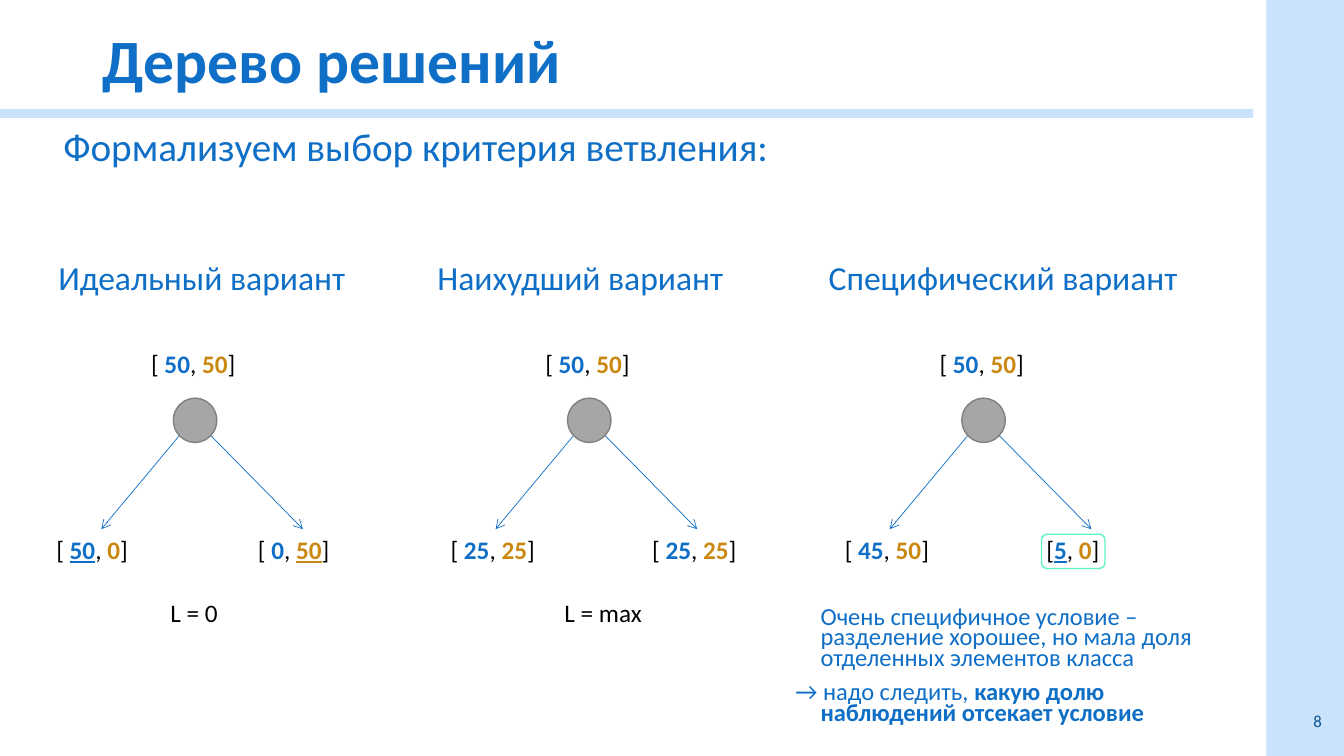
from dataclasses import dataclass

from lxml import etree
from pptx import Presentation
from pptx.dml.color import RGBColor
from pptx.enum import shapes, text
from pptx.oxml.ns import qn
from pptx.util import Inches, Pt


@dataclass(frozen=True)
class Theme:
    font: str = "Calibri"
    blue: str = "0F6FC6"
    navy: str = "0B5394"
    pale: str = "C8E3FB"
    gold: str = "CA8810"
    black: str = "000000"
    node: str = "A6A6A6"
    node_line: str = "808080"
    mint: str = "5FF3CA"
    title: float = 44
    lead: float = 28
    heading: float = 24
    label: float = 18
    note: float = 17.5
    number: float = 12


T = Theme()
TREE_LEFT, TREE_STEP = 0.46, 3.91
LABEL_W, LABEL_H = 1.09, 0.4

# heading, heading left and width, left leaf, right leaf, loss
# A leaf is: opening bracket, first count, second count, index of underlined count
VARIANTS = [
    ("Идеальный вариант", 0.48, 3.62,
     ("[ ", "50", "0", 0), ("[ ", "0", "50", 1), "L = 0"),
    ("Наихудший вариант", 4.24, 3.54,
     ("[ ", "25", "25", None), ("[ ", "25", "25", None), "L = max"),
    ("Специфический вариант", 8.12, 3.71,
     ("[ ", "45", "50", None), ("[", "5", "0", 0), None),
]
ROOT = ("[ ", "50", "50", None)


def rgb(value):
    return RGBColor.from_string(value)


def add_run(p, words, size, color, bold=False, underline=False):
    r = p.add_run()
    r.text = words
    f = r.font
    f.name, f.size, f.bold, f.underline = T.font, Pt(size), bold, underline
    f.color.rgb = rgb(color)


def add_box(parent, x, y, w, h):
    s = parent.shapes.add_textbox(Inches(x), Inches(y), Inches(w), Inches(h))
    s.text_frame.word_wrap = True
    return s


def add_line_of_text(parent, x, y, w, h, words, size, color, spacing=None):
    s = add_box(parent, x, y, w, h)
    p = s.text_frame.paragraphs[0]
    p.line_spacing = spacing
    add_run(p, words, size, color)
    return s


def add_figure(parent, kind, x, y, w, h, fill=None, line=None):
    s = parent.shapes.add_shape(kind, Inches(x), Inches(y), Inches(w), Inches(h))
    s.shadow.inherit = False
    if fill:
        s.fill.solid()
        s.fill.fore_color.rgb = rgb(fill)
    else:
        s.fill.background()
    if line:
        s.line.color.rgb = rgb(line)
        s.line.width = Pt(1)
    else:
        s.line.fill.background()
    return s


def add_counts(parent, x, y, counts):
    opening, first, second, underlined = counts
    s = add_box(parent, x, y, LABEL_W, LABEL_H)
    p = s.text_frame.paragraphs[0]
    add_run(p, opening, T.label, T.black)
    add_run(p, first, T.label, T.blue, True, underlined == 0)
    add_run(p, ", ", T.label, T.black)
    add_run(p, second, T.label, T.gold, True, underlined == 1)
    add_run(p, "]", T.label, T.black)
    return s


def add_arrow(parent, x, y, leaf):
    c = parent.shapes.add_connector(
        shapes.MSO_CONNECTOR.STRAIGHT, Inches(x), Inches(y), leaf.left, leaf.top)
    c.end_connect(leaf, 0)
    c.line.color.rgb = rgb(T.blue)
    c.line.width = Pt(0.5)
    etree.SubElement(c.line._get_or_add_ln(), qn("a:tailEnd"), type="arrow")
    etree.SubElement(c._element.spPr, qn("a:effectLst"))


def add_tree(s, x, left, right, loss):
    tree = s.shapes.add_group_shape()
    add_counts(tree, x + 0.94, 3.41, ROOT)
    for leaf_x, arrow_x, counts in ((x, x + 1.32, left), (x + 2, x + 1.63, right)):
        leaf = add_counts(tree, leaf_x, 5.25, counts)
        add_arrow(tree, arrow_x, 4.32, leaf)
    if loss:
        add_line_of_text(tree, x + 1.13, 5.88, LABEL_W, LABEL_H, loss, T.label, T.black)
    add_figure(tree, shapes.MSO_SHAPE.OVAL, x + 1.26, 3.95, 0.43, 0.44,
               T.node, T.node_line)


def set_title(s, words):
    sp = s.shapes.title
    sp.left, sp.top, sp.width, sp.height = (Inches(v) for v in (0.92, 0.13, 11.5, 1))
    tf = sp.text_frame
    tf.auto_size = text.MSO_AUTO_SIZE.NONE
    tf.vertical_anchor = text.MSO_ANCHOR.MIDDLE
    p = tf.paragraphs[0]
    p.alignment = text.PP_ALIGN.LEFT
    p.line_spacing = 0.9
    add_run(p, words, T.title, T.blue, True)


def add_note(s):
    tf = add_box(s, 7.79, 5.99, 4.6, 1.35).text_frame
    condition, warning = tf.paragraphs[0], tf.add_paragraph()
    for p, indent in ((condition, 0), (warning, -0.25)):
        p.line_spacing = 0.7
        pPr = p._p.get_or_add_pPr()
        pPr.set("marL", str(Inches(0.25)))
        pPr.set("indent", str(Inches(indent)))
    warning.space_before = Pt(10)
    add_run(condition, "Очень специфичное условие – разделение хорошее, но мала доля "
            "отделенных элементов класса", T.note, T.blue)
    add_run(warning, "→ надо следить, ", T.note, T.blue)
    add_run(warning, "какую долю наблюдений отсекает условие", T.note, T.blue, True)


def add_slide_number(s, number):
    sp = add_line_of_text(s, 10.21, 6.95, 3, 0.4, number, T.number, T.navy)
    sp.text_frame.vertical_anchor = text.MSO_ANCHOR.MIDDLE
    sp.text_frame.paragraphs[0].alignment = text.PP_ALIGN.RIGHT


def main():
    prs = Presentation()
    prs.slide_width, prs.slide_height = Inches(13.33), Inches(7.5)
    s = prs.slides.add_slide(prs.slide_layouts[5])

    # Side band and rule under the title
    add_figure(s, shapes.MSO_SHAPE.RECTANGLE, 12.56, 0, 0.77, 7.5, T.pale)
    add_figure(s, shapes.MSO_SHAPE.RECTANGLE, 0, 1.08, 12.43, 0.09, T.pale)

    # Title, lead and slide number
    set_title(s, "Дерево решений")
    add_line_of_text(s, 0.53, 1.22, 8.77, 0.59,
                     "Формализуем выбор критерия ветвления:", T.lead, T.blue, 0.9)
    add_slide_number(s, "8")

    # Three ways to split the same node
    for i, (heading, x, w, left, right, loss) in enumerate(VARIANTS):
        add_line_of_text(s, x, 2.54, w, 0.66, heading, T.heading, T.blue, 0.9)
        add_tree(s, TREE_LEFT + i * TREE_STEP, left, right, loss)

    # Small leaf highlighted and explained
    add_figure(s, shapes.MSO_SHAPE.ROUNDED_RECTANGLE, 10.33, 5.3, 0.63, 0.34,
               line=T.mint)
    add_note(s)

    prs.save("out.pptx")


if __name__ == "__main__":
    main()
